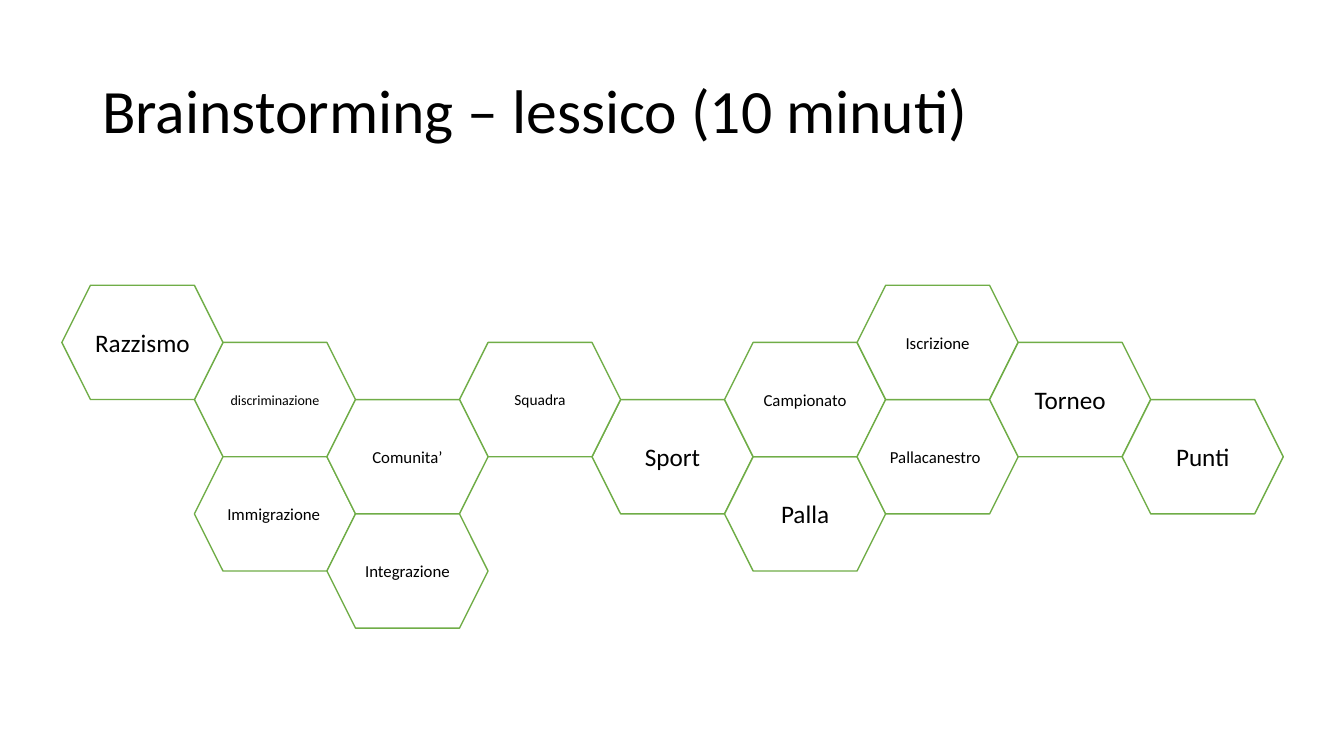
from pptx import Presentation
from pptx.dml.color import RGBColor
from pptx.enum.shapes import MSO_SHAPE
from pptx.enum.text import MSO_ANCHOR, PP_ALIGN
from pptx.util import Cm, Pt

TITLE = "Brainstorming – lessico (10 minuti)"

# word, column, half-row, type size, alignment
WORDS = [
    ("discriminazione", 1, 1, "tiny", "center"),
    ("Immigrazione", 1, 3, "medium", "left"),
    ("Sport", 4, 2, "large", "center"),
    ("Palla", 5, 3, "large", "center"),
    ("Campionato", 5, 1, "medium", "center"),
    ("Squadra", 3, 1, "small", "center"),
    ("Comunita’", 2, 2, "medium", "center"),
    ("Pallacanestro", 6, 2, "medium", "left"),
    ("Iscrizione", 6, 0, "medium", "center"),
    ("Integrazione", 2, 4, "medium", "center"),
    ("Torneo", 7, 1, "large", "center"),
    ("Razzismo", 0, 0, "large", "center"),
    ("Punti", 8, 2, "large", "center"),
]

THEME = {
    "font": "Calibri",
    "text": RGBColor(0x00, 0x00, 0x00),
    "cell": RGBColor(0xFF, 0xFF, 0xFF),
    "outline": RGBColor(0x70, 0xAD, 0x47),
    "sizes": {"title": 44, "large": 18, "medium": 12, "small": 11, "tiny": 10},
}
ALIGNMENTS = {"left": PP_ALIGN.LEFT, "center": PP_ALIGN.CENTER}

COMB_LEFT, COMB_TOP = 1.56, 7.19
COLUMN_STEP, HALF_ROW = 3.34, 1.44
CELL_WIDTH, CELL_HEIGHT = 4.06, 2.88


def write(holder, words, size, **paragraph_format):
    frame = holder.text_frame
    frame.word_wrap = True
    frame.vertical_anchor = MSO_ANCHOR.MIDDLE
    paragraph = frame.paragraphs[0]
    paragraph.text = words
    for attribute, value in paragraph_format.items():
        setattr(paragraph, attribute, value)
    font_format = {"name": THEME["font"], "size": Pt(THEME["sizes"][size])}
    for attribute, value in font_format.items():
        setattr(paragraph.font, attribute, value)
    paragraph.font.color.rgb = THEME["text"]


def add_word_cell(slide, word, column, half_row, size, alignment):
    cell = slide.shapes.add_shape(
        MSO_SHAPE.HEXAGON,
        Cm(COMB_LEFT + column * COLUMN_STEP),
        Cm(COMB_TOP + half_row * HALF_ROW),
        Cm(CELL_WIDTH),
        Cm(CELL_HEIGHT),
    )
    cell.shadow.inherit = False
    cell.fill.solid()
    cell.fill.fore_color.rgb = THEME["cell"]
    cell.line.color.rgb = THEME["outline"]
    cell.line.width = Pt(1)
    write(cell, word, size, alignment=ALIGNMENTS[alignment])


def main():
    deck = Presentation()
    deck.slide_width, deck.slide_height = Cm(33.87), Cm(19.05)
    slide = deck.slides.add_slide(deck.slide_layouts[6])
    heading = slide.shapes.add_textbox(Cm(2.33), Cm(1.01), Cm(29.21), Cm(3.68))
    write(heading, TITLE, "title", line_spacing=0.9)
    for entry in WORDS:
        add_word_cell(slide, *entry)
    deck.save("out.pptx")


if __name__ == "__main__":
    main()
